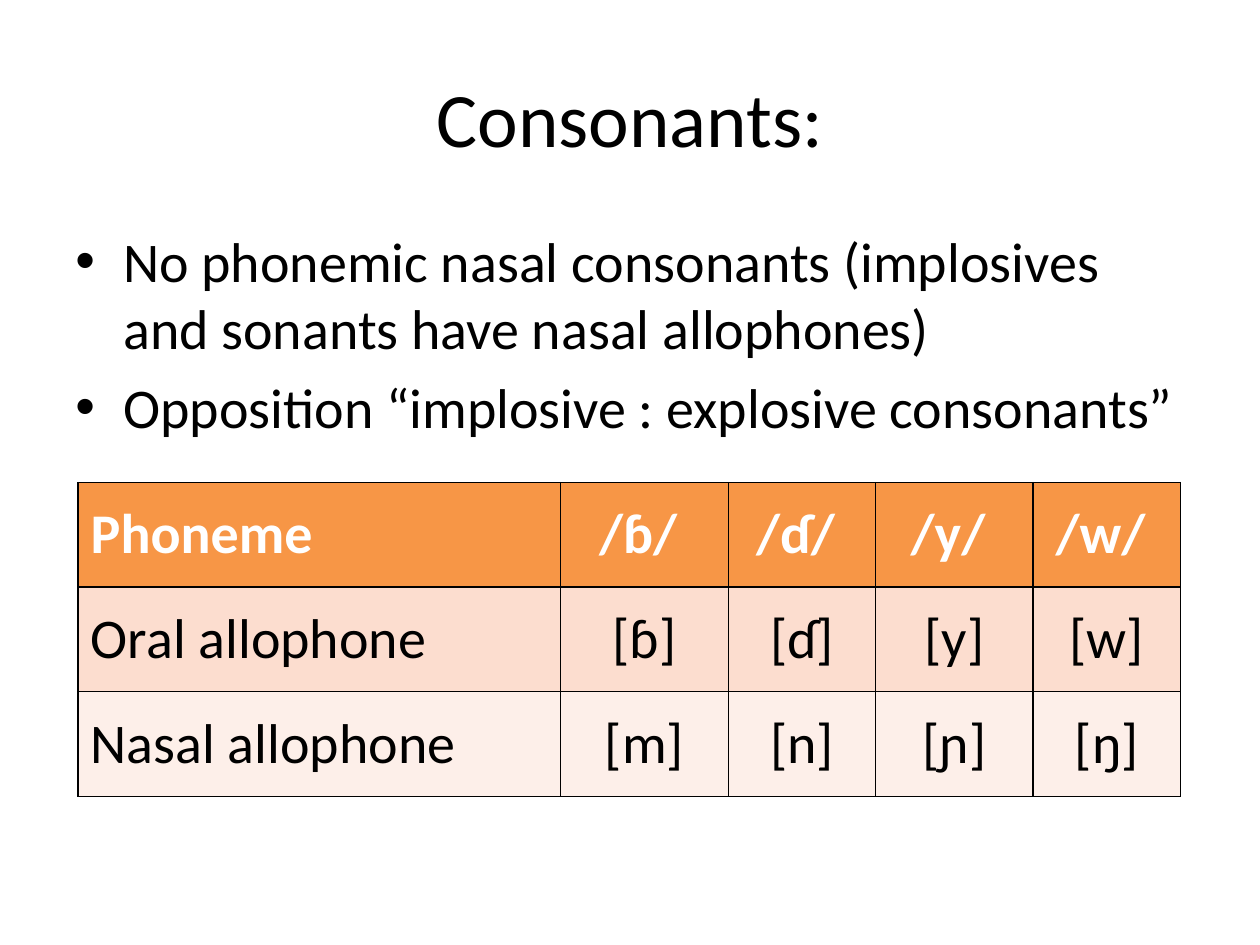
from dataclasses import dataclass

from lxml import etree
from pptx import Presentation
from pptx import util as u
from pptx.dml.color import RGBColor
from pptx.enum import text
from pptx.oxml.ns import qn


@dataclass
class Row:
    cells: list[str]
    fill: str
    color: str = "000000"
    bold: bool = False


BULLETS = [
    "No phonemic nasal consonants (implosives and sonants have nasal allophones)",
    "Opposition “implosive : explosive consonants”",
]
ROWS = [
    Row(["Phoneme", "/ɓ/ ", "/ɗ/ ", "/y/ ", "/w/ "], "F79646", "FFFFFF", True),
    Row(["Oral allophone", "[ɓ]", "[ɗ]", "[y]", "[w]"], "FCDDCF"),
    Row(["Nasal allophone", "[m]", "[n]", "[ɲ]", "[ŋ]"], "FDEFE9"),
]
COL_WIDTHS = [3.83, 1.33, 1.17, 1.25, 1.17]
ROW_HEIGHT = 0.83


def rgb(value: str) -> RGBColor:
    return RGBColor.from_string(value)


def write(p, content: str, *, size=32, color="000000", bold=False, align="LEFT"):
    p.alignment = getattr(text.PP_ALIGN, align)
    r = p.add_run()
    r.text = content
    r.font.name = "Calibri"
    r.font.size = u.Pt(size)
    r.font.bold = bold
    r.font.color.rgb = rgb(color)


def add_box(s, left: float, top: float, width: float, height: float, anchor="TOP"):
    sp = s.shapes.add_textbox(*map(u.Inches, (left, top, width, height)))
    tf = sp.text_frame
    tf.word_wrap = True
    tf.vertical_anchor = getattr(text.MSO_ANCHOR, anchor)
    return tf


def add_bullet(p) -> None:
    p.space_before = u.Pt(6.4)
    ppr = p._p.get_or_add_pPr()
    ppr.set("marL", str(u.Inches(0.38)))
    ppr.set("indent", str(u.Inches(-0.38)))
    etree.SubElement(ppr, qn("a:buFont"), typeface="Arial")
    etree.SubElement(ppr, qn("a:buChar"), char="•")


def add_borders(cell, color="000000", width=1) -> None:
    tcpr = cell._tc.get_or_add_tcPr()
    for side in ("lnL", "lnR", "lnT", "lnB"):
        ln = etree.SubElement(tcpr, qn(f"a:{side}"), w=str(u.Pt(width)))
        fill = etree.SubElement(ln, qn("a:solidFill"))
        etree.SubElement(fill, qn("a:srgbClr"), val=color)


def add_phoneme_table(s, left: float, top: float, rows: list[Row]) -> None:
    size = (sum(COL_WIDTHS), ROW_HEIGHT * len(rows))
    table = s.shapes.add_table(
        len(rows), len(COL_WIDTHS), *map(u.Inches, (left, top, *size))
    ).table
    for col, width in zip(table.columns, COL_WIDTHS):
        col.width = u.Inches(width)
    for i, row in enumerate(rows):
        table.rows[i].height = u.Inches(ROW_HEIGHT)
        for j, content in enumerate(row.cells):
            cell = table.cell(i, j)
            add_borders(cell)
            cell.fill.solid()
            cell.fill.fore_color.rgb = rgb(row.fill)
            cell.vertical_anchor = text.MSO_ANCHOR.MIDDLE
            write(cell.text_frame.paragraphs[0], content, color=row.color,
                  bold=row.bold, align="CENTER" if j else "LEFT")


def main() -> None:
    prs = Presentation()
    prs.slide_width, prs.slide_height = u.Inches(10), u.Inches(7.5)
    s = prs.slides.add_slide(prs.slide_layouts[6])

    tf = add_box(s, 0.5, 0.3, 9, 1.25, anchor="MIDDLE")
    write(tf.paragraphs[0], "Consonants:", size=44, align="CENTER")

    tf = add_box(s, 0.5, 1.75, 9, 4.95)
    for i, content in enumerate(BULLETS):
        p = tf.add_paragraph() if i else tf.paragraphs[0]
        write(p, content)
        add_bullet(p)

    add_phoneme_table(s, 0.62, 3.83, ROWS)
    prs.save("out.pptx")


if __name__ == "__main__":
    main()
